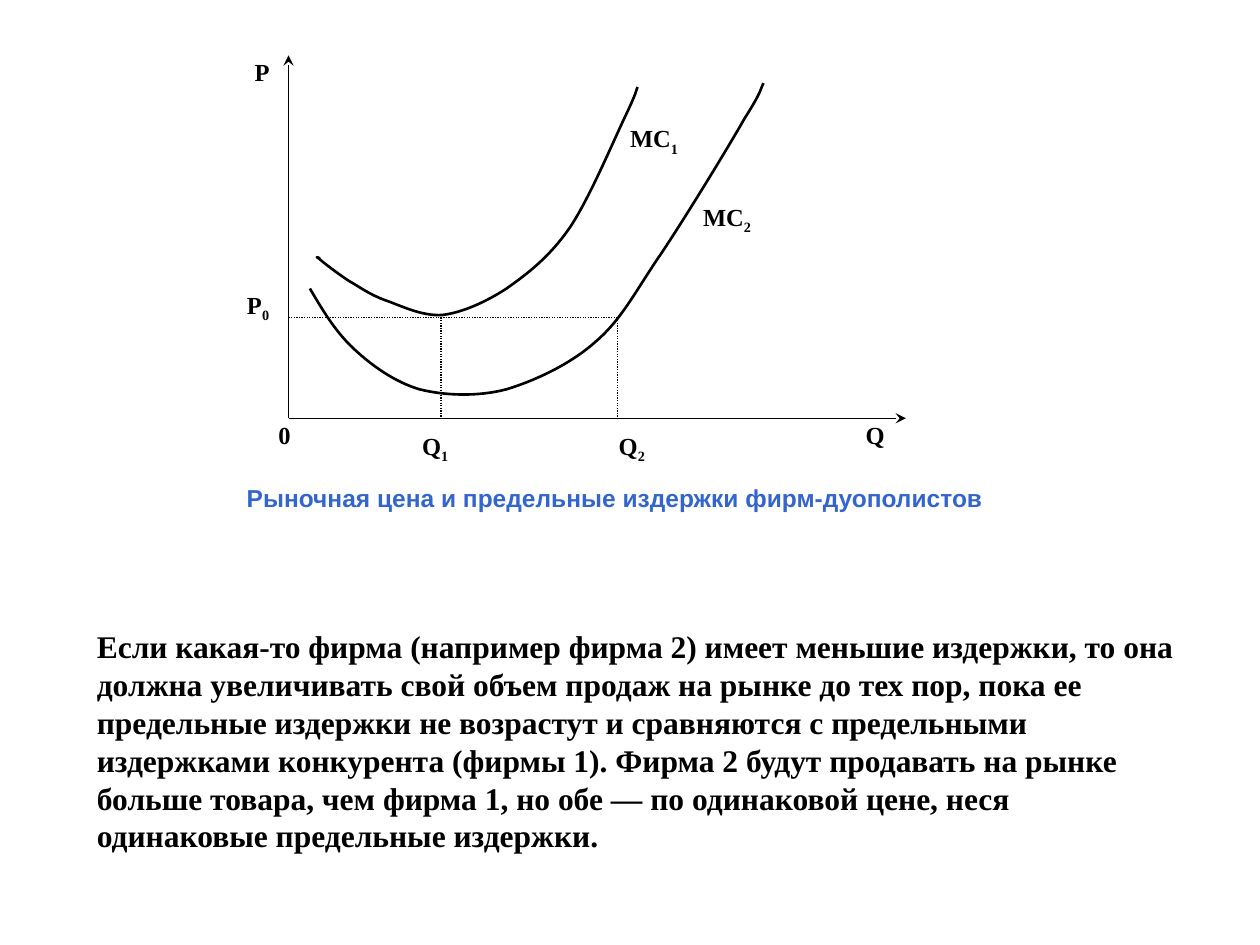
from pptx import Presentation
from pptx.dml.color import RGBColor
from pptx.enum.dml import MSO_LINE
from pptx.enum.shapes import MSO_CONNECTOR
from pptx.enum.text import MSO_AUTO_SIZE, PP_ALIGN
from pptx.oxml.ns import qn
from pptx.util import Inches, Pt
from lxml.etree import SubElement

BLACK = RGBColor(0x00, 0x00, 0x00)
BLUE = RGBColor(0x33, 0x66, 0xCC)
SERIF = "Times New Roman"

# Axes and the points where the curves meet the price
LEFT, BASE, PRICE = 2.29, 3.32, 2.52
Q_ONE, Q_TWO = 3.5, 4.9

# Labels: text, subscript, left, top, width
LABELS = [
    ("Q", "1", 3.33, 3.41, 0.35),
    ("Q", "2", 4.89, 3.41, 0.35),
    ("Q", "", 6.85, 3.32, 0.35),
    ("Р", "", 2, 0.44, 0.35),
    ("0", "", 2.19, 3.32, 0.35),
    ("MС", "1", 4.98, 0.97, 0.69),
    ("MC", "2", 5.56, 1.59, 0.52),
    ("P", "0", 1.94, 2.29, 0.35),
]

# Cost curves: a start point, then three Bezier points for each piece
COST_ONE = [
    (2.54, 2.05),
    (2.54, 2.05), (2.49, 2.03), (2.53, 2.05),
    (2.56, 2.08), (2.68, 2.17), (2.77, 2.23),
    (2.86, 2.28), (2.92, 2.33), (3.05, 2.38),
    (3.17, 2.42), (3.34, 2.51), (3.51, 2.5),
    (3.67, 2.48), (3.85, 2.4), (4.02, 2.29),
    (4.19, 2.17), (4.36, 2.04), (4.52, 1.81),
    (4.67, 1.59), (4.86, 1.14), (4.95, 0.95),
    (5.04, 0.76), (5.04, 0.75), (5.06, 0.69),
]
COST_TWO = [
    (2.46, 2.29),
    (2.56, 2.46), (2.66, 2.63), (2.81, 2.77),
    (2.95, 2.9), (3.13, 3.03), (3.33, 3.09),
    (3.53, 3.14), (3.79, 3.15), (4.02, 3.09),
    (4.25, 3.02), (4.53, 2.89), (4.73, 2.71),
    (4.94, 2.53), (5.05, 2.3), (5.25, 2.01),
    (5.45, 1.71), (5.78, 1.17), (5.91, 0.94),
    (6.05, 0.72), (6.03, 0.72), (6.06, 0.66),
]

CAPTION = "Рыночная цена и предельные издержки фирм-дуополистов"
BODY = (
    "Если какая-то фирма (например фирма 2) имеет меньшие издержки, то она "
    "должна увеличивать свой объем продаж на рынке до тех пор, пока ее "
    "предельные издержки не возрастут и сравняются с предельными издержками "
    "конкурента (фирмы 1). Фирма 2 будут продавать на рынке больше товара, "
    "чем фирма 1, но обе — по одинаковой цене, неся одинаковые предельные "
    "издержки."
)


def add_text(slide, text, left, top, width, height, size=14, face=SERIF,
             color=BLACK, tight=True):
    box = slide.shapes.add_textbox(
        Inches(left), Inches(top), Inches(width), Inches(height))
    frame = box.text_frame
    frame.word_wrap = True
    if tight:
        frame.margin_left = frame.margin_right = Inches(0.02)
        frame.margin_top = frame.margin_bottom = Inches(0.01)
    para = frame.paragraphs[0]
    para.add_run().text = text
    font = para.font
    font.name, font.size, font.bold = face, Pt(size), True
    font.color.rgb = color
    return frame


def add_label(slide, text, sub, left, top, width):
    frame = add_text(slide, text, left, top, width, 0.32)
    if sub:
        run = frame.paragraphs[0].add_run()
        run.text = sub
        run.font._element.set("baseline", "-25000")


def add_line(slide, start, end, arrow=False):
    """Draw an axis with an arrowhead, or a dotted guide."""
    line = slide.shapes.add_connector(
        MSO_CONNECTOR.STRAIGHT, *map(Inches, start + end))
    line.line.color.rgb = BLACK
    line.line.width = Pt(0.75)
    if arrow:
        SubElement(line.line._get_or_add_ln(), qn("a:tailEnd"), type="stealth")
    else:
        line.line.dash_style = MSO_LINE.ROUND_DOT
    SubElement(line._element.spPr, qn("a:effectLst"))


def add_curve(slide, points):
    first, *rest = [(Inches(x), Inches(y)) for x, y in points]
    build = slide.shapes.build_freeform(*first)
    build.add_line_segments(rest, close=False)
    shape = build.convert_to_shape()
    shape.shadow.inherit = False
    shape.fill.background()
    shape.line.color.rgb = BLACK
    shape.line.width = Pt(1.5)
    # Join each three straight steps into one Bezier piece
    track = shape._element.find(".//" + qn("a:path"))
    steps = track.findall(qn("a:lnTo"))
    for i in range(0, len(steps), 3):
        piece = SubElement(track, qn("a:cubicBezTo"))
        for step in steps[i:i + 3]:
            piece.append(step[0])
            track.remove(step)


def main():
    deck = Presentation()
    deck.slide_width, deck.slide_height = Inches(10), Inches(7.5)
    slide = deck.slides.add_slide(deck.slide_layouts[6])

    # Axes
    for tip in ((LEFT, 0.44), (7.19, BASE)):
        add_line(slide, (LEFT, BASE), tip, arrow=True)

    # Dotted guides
    add_line(slide, (Q_TWO, PRICE), (LEFT, PRICE))
    for x in (Q_ONE, Q_TWO):
        add_line(slide, (x, PRICE), (x, BASE))

    # Curves and their labels
    for points in (COST_TWO, COST_ONE):
        add_curve(slide, points)
    for label in LABELS:
        add_label(slide, *label)

    # Caption and explanation
    frame = add_text(slide, CAPTION, 1.69, 3.82, 6.38, 0.62,
                     face="Arial", color=BLUE)
    frame.paragraphs[0].alignment = PP_ALIGN.CENTER
    frame = add_text(slide, BODY, 0.67, 4.93, 8.82, 1.9, size=18, tight=False)
    frame.auto_size = MSO_AUTO_SIZE.SHAPE_TO_FIT_TEXT

    deck.save("out.pptx")


if __name__ == "__main__":
    main()
